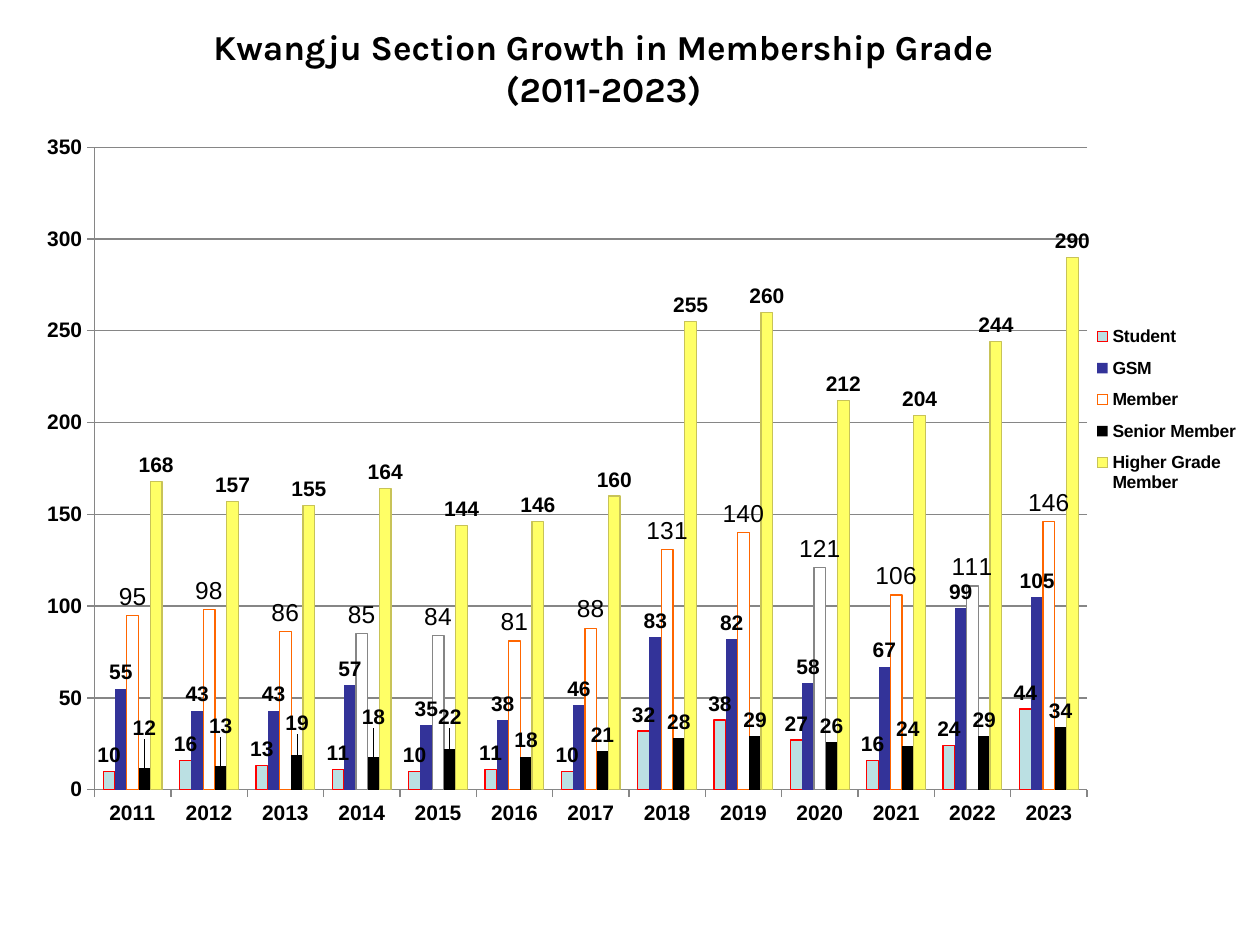
from lxml import etree
from pptx import Presentation
from pptx.chart.data import CategoryChartData
from pptx.dml.color import RGBColor
from pptx.enum.chart import XL_CHART_TYPE, XL_LABEL_POSITION, XL_LEGEND_POSITION, XL_TICK_MARK
from pptx.enum.text import MSO_ANCHOR, PP_ALIGN
from pptx.oxml.ns import qn
from pptx.util import Inches, Pt

BLACK = RGBColor(0x00, 0x00, 0x00)
GRAY = RGBColor(0x86, 0x86, 0x86)
WHITE = RGBColor(0xFF, 0xFF, 0xFF)
RED = RGBColor(0xFF, 0x00, 0x00)
ORANGE = RGBColor(0xFF, 0x66, 0x00)
PALE_BLUE = RGBColor(0xBB, 0xE0, 0xE3)
NAVY = RGBColor(0x33, 0x33, 0x99)
YELLOW = RGBColor(0xFF, 0xFF, 0x66)
OLIVE = RGBColor(0xC8, 0xC3, 0x58)

YEARS = [str(year) for year in range(2011, 2024)]
# name, values, fill, outline, label size, bold label
GRADES = [
    ("Student", [10, 16, 13, 11, 10, 11, 10, 32, 38, 27, 16, 24, 44], PALE_BLUE, RED, 12, True),
    ("GSM", [55, 43, 43, 57, 35, 38, 46, 83, 82, 58, 67, 99, 105], NAVY, None, 12, True),
    ("Member", [95, 98, 86, 85, 84, 81, 88, 131, 140, 121, 106, 111, 146], WHITE, ORANGE, 14, False),
    ("Senior Member", [12, 13, 19, 18, 22, 18, 21, 28, 29, 26, 24, 29, 34], BLACK, None, 12, True),
    ("Higher Grade Member", [168, 157, 155, 164, 144, 146, 160, 255, 260, 212, 204, 244, 290],
     YELLOW, OLIVE, 12, True),
]
GRAY_OUTLINED_MEMBERS = ("2014", "2015", "2020", "2022")
# Shifts of the first Senior Member labels, as fractions of the chart
RAISED_LABELS = [(0, -0.03), (0, -0.03), (0, -0.02), (0, -0.03), (0, -0.02)]


def style_font(font, size, bold, name="Arial"):
    font.name = name
    font.size = Pt(size)
    font.bold = bold
    font.color.rgb = BLACK


def make_layout(**settings):
    layout = etree.Element(qn("c:layout"))
    manual = etree.SubElement(layout, qn("c:manualLayout"))
    for tag, value in settings.items():
        etree.SubElement(manual, qn(f"c:{tag}")).set("val", str(value))
    return layout


def replace_layout(parent, position, layout):
    for old in parent.findall(qn("c:layout")):
        parent.remove(old)
    parent.insert(position, layout)


def add_title(page, left, top, width, height):
    box = page.shapes.add_textbox(left, top, width, height)
    frame = box.text_frame
    frame.word_wrap = True
    frame.vertical_anchor = MSO_ANCHOR.MIDDLE
    frame.text = "Kwangju Section Growth in Membership Grade\v(2011-2023)"
    para = frame.paragraphs[0]
    para.alignment = PP_ALIGN.CENTER
    for span in para.runs:
        style_font(span.font, 20, True, "Karla")


def style_axes(chart):
    for axis in (chart.category_axis, chart.value_axis):
        axis.major_tick_mark = XL_TICK_MARK.OUTSIDE
        axis.minor_tick_mark = XL_TICK_MARK.NONE
        axis.format.line.color.rgb = GRAY
        axis.format.line.width = Pt(0.75)
        style_font(axis.tick_labels.font, 12, True)
    values = chart.value_axis
    values.minimum_scale, values.maximum_scale, values.major_unit = 0, 350, 50
    values.tick_labels.number_format = "#,##0"
    values.tick_labels.number_format_is_linked = False
    values.has_major_gridlines = True
    values.major_gridlines.format.line.color.rgb = GRAY
    values.major_gridlines.format.line.width = Pt(0.75)


def style_series(series, fill, outline, size, bold):
    series.invert_if_negative = False
    series.format.fill.solid()
    series.format.fill.fore_color.rgb = fill
    if outline is None:
        series.format.line.fill.background()
    else:
        series.format.line.color.rgb = outline
        series.format.line.width = Pt(0.75)
    labels = series.data_labels
    labels.show_value = True
    labels.position = XL_LABEL_POSITION.OUTSIDE_END
    style_font(labels.font, size, bold)


def outline_points(series, years, color):
    for year in years:
        point = series.points[YEARS.index(year)].format
        point.fill.solid()
        point.fill.fore_color.rgb = WHITE
        point.line.color.rgb = color
        point.line.width = Pt(0.75)


def raise_labels(series, shifts):
    for index, (across, down) in enumerate(shifts):
        label = series.points[index].data_label
        style_font(label.font, 12, True)
        label.position = XL_LABEL_POSITION.OUTSIDE_END
    for element, (across, down) in zip(series.data_labels._element.findall(qn("c:dLbl")), shifts):
        replace_layout(element, 1, make_layout(x=across, y=down))


def add_growth_chart(page, left, top, width, height):
    data = CategoryChartData(number_format="General")
    data.categories = YEARS
    for name, values, *_ in GRADES:
        data.add_series(name, values)
    chart = page.shapes.add_chart(
        XL_CHART_TYPE.COLUMN_CLUSTERED, left, top, width, height, data).chart
    chart.has_title = False
    style_font(chart.font, 18, False)
    style_axes(chart)

    plot = chart.plots[0]
    plot.gap_width = 150
    plot.overlap = 0
    plot.vary_by_categories = False
    for series, (_, _, *look) in zip(plot.series, GRADES):
        style_series(series, *look)
    outline_points(plot.series[2], GRAY_OUTLINED_MEMBERS, GRAY)
    raise_labels(plot.series[3], RAISED_LABELS)

    chart.has_legend = True
    legend = chart.legend
    legend.position = XL_LEGEND_POSITION.RIGHT
    legend.include_in_layout = False
    style_font(legend.font, 10, True)
    replace_layout(legend._element, 1, make_layout(
        xMode="edge", yMode="edge", x=0.855, y=0.24, w=0.115, h=0.24))
    plot_area = chart._chartSpace.chart.plotArea
    replace_layout(plot_area, 0, make_layout(
        layoutTarget="inner", xMode="edge", yMode="edge", x=0.096, y=0.027, w=0.756, h=0.816))


def main():
    deck = Presentation()
    deck.slide_width, deck.slide_height = Inches(10), Inches(7.5)
    page = deck.slides.add_slide(deck.slide_layouts[6])
    add_title(page, Inches(0.5), Inches(0.17), Inches(8.58), Inches(0.73))
    add_growth_chart(page, Inches(-0.25), Inches(1), Inches(10.42), Inches(6.25))
    deck.save("out.pptx")


if __name__ == "__main__":
    main()
